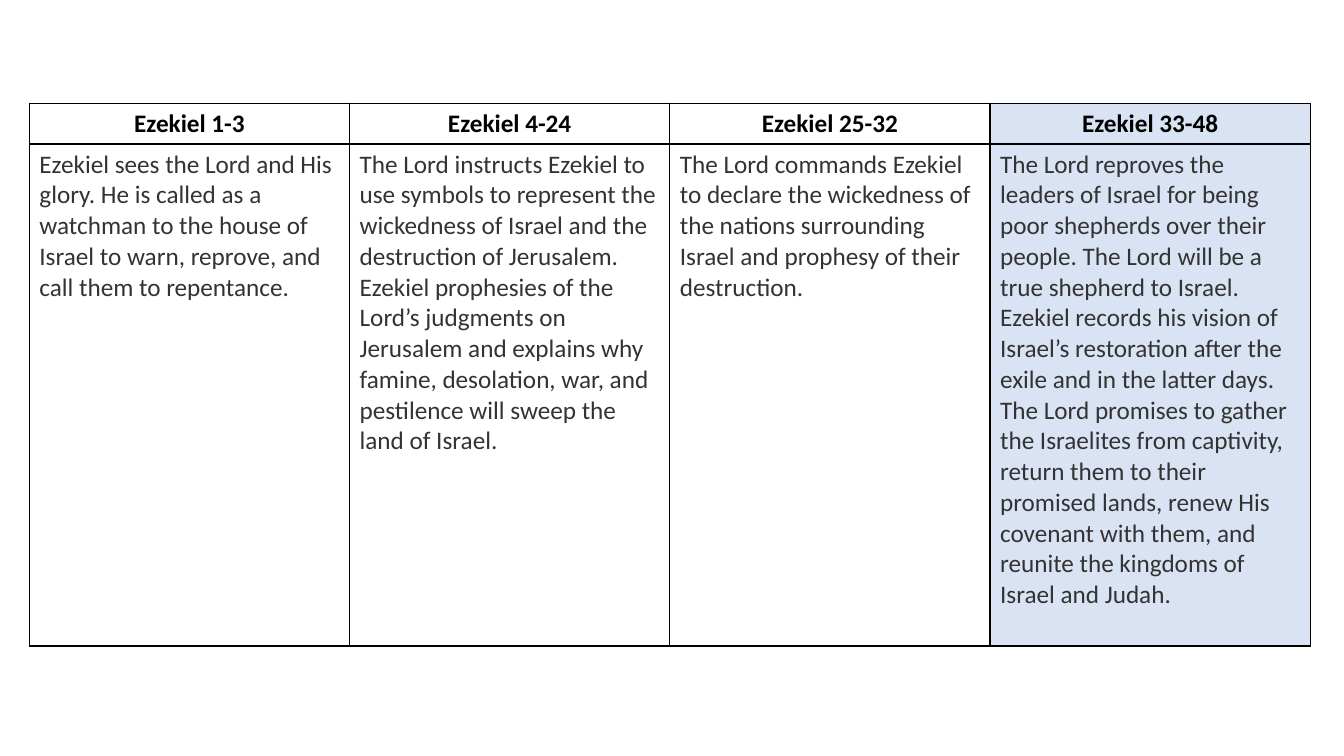
"""Build a slide with a four-part outline table of the book of Ezekiel."""
from lxml import etree
from pptx import Presentation
from pptx.dml.color import RGBColor
from pptx.enum import text
from pptx.oxml import ns
from pptx.util import Cm, Pt

BLACK = RGBColor(0x00, 0x00, 0x00)
GRAY = RGBColor(0x33, 0x33, 0x33)
WHITE = RGBColor(0xFF, 0xFF, 0xFF)
BLUE = RGBColor(0xDA, 0xE3, 0xF3)

PARTS = [
    ("Ezekiel 1-3",
     "Ezekiel sees the Lord and His glory. He is called as a watchman to the "
     "house of Israel to warn, reprove, and call them to repentance.", WHITE),
    ("Ezekiel 4-24",
     "The Lord instructs Ezekiel to use symbols to represent the wickedness of "
     "Israel and the destruction of Jerusalem. Ezekiel prophesies of the Lord’s "
     "judgments on Jerusalem and explains why famine, desolation, war, and "
     "pestilence will sweep the land of Israel.", WHITE),
    ("Ezekiel 25-32",
     "The Lord commands Ezekiel to declare the wickedness of the nations "
     "surrounding Israel and prophesy of their destruction.", WHITE),
    ("Ezekiel 33-48",
     "The Lord reproves the leaders of Israel for being poor shepherds over "
     "their people. The Lord will be a true shepherd to Israel. Ezekiel records "
     "his vision of Israel’s restoration after the exile and in the latter days. "
     "The Lord promises to gather the Israelites from captivity, return them to "
     "their promised lands, renew His covenant with them, and reunite the "
     "kingdoms of Israel and Judah.", BLUE),
]


def add_edges(cell):
    """Draw a thin black line on all four sides of a cell."""
    props = cell._tc.get_or_add_tcPr()
    for side in ("lnL", "lnR", "lnT", "lnB"):
        line = etree.SubElement(props, ns.qn(f"a:{side}"), w=str(Pt(1)))
        fill = etree.SubElement(line, ns.qn("a:solidFill"))
        etree.SubElement(fill, ns.qn("a:srgbClr"), val=str(BLACK))


def fill_cell(cell, words, back, color, bold, align):
    """Write and format one cell."""
    add_edges(cell)
    cell.fill.solid()
    cell.fill.fore_color.rgb = back
    cell.text_frame.text = words
    para = cell.text_frame.paragraphs[0]
    para.alignment = align
    font = para.runs[0].font
    font.name, font.size, font.bold = "Calibri", Pt(18), bold
    font.color.rgb = color


def add_outline(slide):
    """Add the table with one column for each part of the book."""
    frame = slide.shapes.add_table(
        2, len(PARTS), Cm(0.74), Cm(2.6), Cm(32.28), Cm(13.68))
    table = frame.table
    table.horz_banding = False
    table.rows[0].height = Cm(1.03)
    table.rows[1].height = Cm(12.65)
    for col, (title, body, back) in enumerate(PARTS):
        fill_cell(table.cell(0, col), title, back, BLACK, True,
                  text.PP_ALIGN.CENTER)
        fill_cell(table.cell(1, col), body, back, GRAY, False,
                  text.PP_ALIGN.LEFT)


def main():
    """Build and save the deck."""
    deck = Presentation()
    deck.slide_width, deck.slide_height = Cm(33.87), Cm(19.05)
    slide = deck.slides.add_slide(deck.slide_layouts[6])
    add_outline(slide)
    deck.save("out.pptx")


if __name__ == "__main__":
    main()
